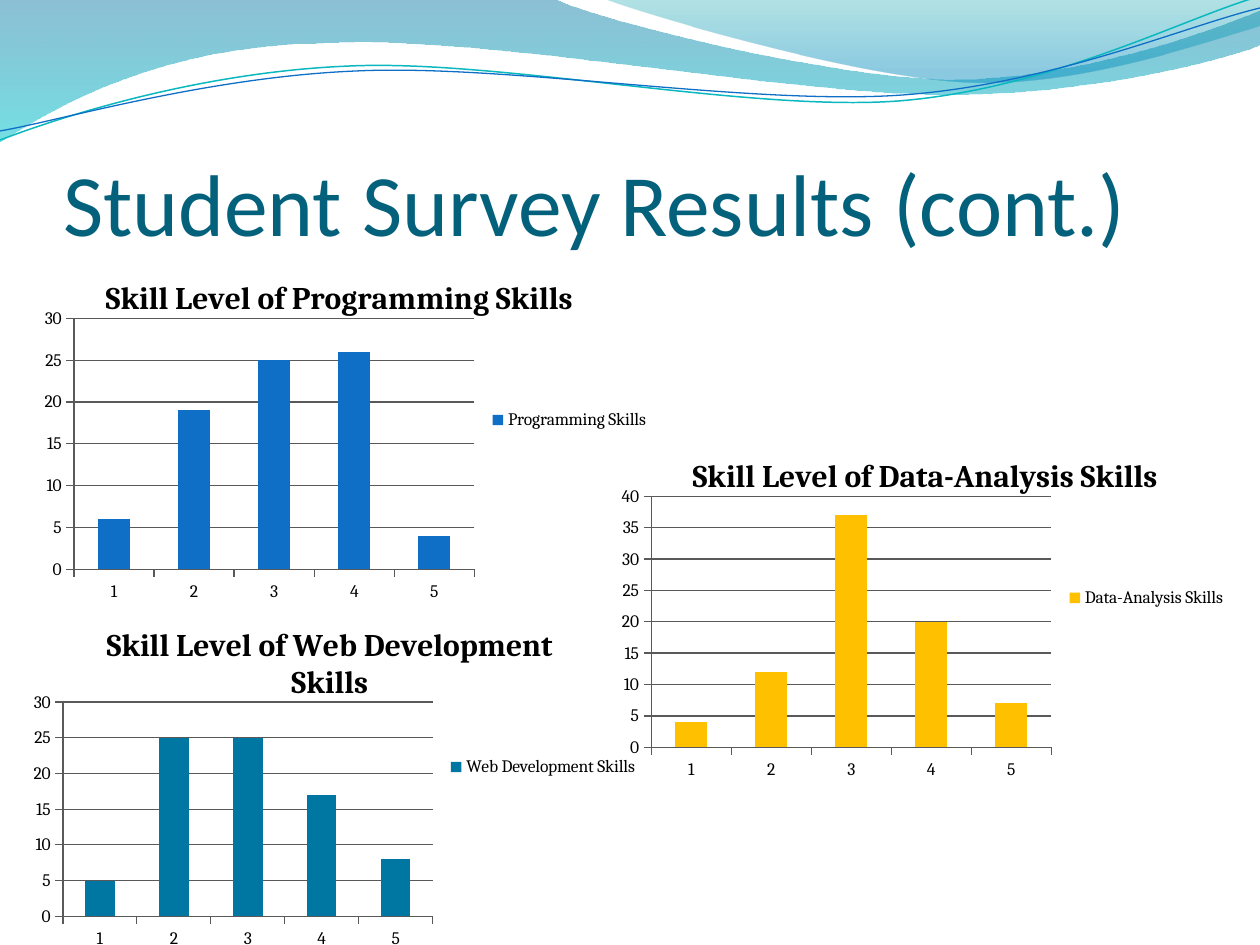
from pptx import Presentation
from pptx.chart.data import CategoryChartData as ChartData
from pptx.dml.color import RGBColor as RGB
from pptx.enum.chart import XL_CHART_TYPE as Kind, XL_LEGEND_POSITION as Legend
from pptx.enum.text import MSO_ANCHOR as Anchor
from pptx.oxml.ns import qn
from pptx.util import Pt
from lxml.etree import SubElement

PX = 914400 // 126
BLACK = RGB(0x00, 0x00, 0x00)
GRID = RGB(0x59, 0x59, 0x59)
TITLE = RGB(0x04, 0x61, 0x7B)
BLUE = RGB(0x0F, 0x6F, 0xC6)
TEAL = RGB(0x00, 0x76, 0xA3)
GOLD = RGB(0xFF, 0xC0, 0x00)
AQUA = RGB(0x0A, 0xB8, 0xBF)
DEEP = RGB(0x00, 0x74, 0xA1)
CYAN = RGB(0x00, 0xC6, 0xCF)
SEA = RGB(0x00, 0xA1, 0xA9)
SKY = RGB(0x00, 0x8B, 0xBF)


class Deck:
    head, body = "Calibri", "Cambria"

    def __init__(self, wide, high):
        self.prs = Presentation()
        self.prs.slide_width, self.prs.slide_height = wide * PX, high * PX
        self.slide = self.prs.slides.add_slide(self.prs.slide_layouts[6])
        self.shapes = self.slide.shapes

    def free(self, start, parts, close):
        """A part is one point for a line, or three for a Bezier curve."""
        pen = self.shapes.build_freeform(*start, scale=PX)
        for part in parts:
            pen.add_line_segments(part, close=False)
        if close:
            pen.add_line_segments([], close=True)
        shape = pen.convert_to_shape()
        shape.shadow.inherit = False

        # Join each three line steps of a curve into one Bezier step
        steps = iter(list(shape._element.iter(qn("a:lnTo"))))
        for part in parts:
            first, *rest = [next(steps) for _ in part]
            if rest:
                first.tag = qn("a:cubicBezTo")
            for step in rest:
                first.append(step[0])
                step.getparent().remove(step)
        return shape

    def wave(self, start, parts, stops):
        shape = self.free(start, parts, True)
        shape.line.fill.background()
        shape.fill.gradient()
        shape.fill.gradient_angle = 270
        for stop, (pos, color, _) in zip(shape.fill.gradient_stops, stops):
            stop.position = pos
            stop.color.rgb = color
        fill = shape._element.spPr.find(qn("a:gradFill"))
        for node, (_, _, alpha) in zip(fill.iter(qn("a:srgbClr")), stops):
            SubElement(node, qn("a:alpha")).set("val", str(alpha * 1000))

    def curve(self, start, parts, color, width):
        shape = self.free(start, parts, False)
        shape.fill.background()
        shape.line.color.rgb = color
        shape.line.width = Pt(width)

    def style(self, font, name, size, color, bold=False):
        font.name, font.size, font.bold = name, Pt(size), bold
        font.color.rgb = color

    def title(self, text, *box):
        frame = self.shapes.add_textbox(*(n * PX for n in box)).text_frame
        frame.word_wrap = True
        frame.vertical_anchor = Anchor.BOTTOM
        frame.margin_left = frame.margin_right = frame.margin_bottom = 0
        run = frame.paragraphs[0].add_run()
        run.text = text
        self.style(run.font, self.head, 50, TITLE)

    def place(self, title, x, y):
        """Set the title's corner as a share of the chart's size."""
        node = title._element
        layout = node.find(qn("c:layout"))
        if layout is None:
            layout = SubElement(node, qn("c:layout"))
            node.find(qn("c:tx")).addnext(layout)
        manual = SubElement(layout, qn("c:manualLayout"))
        for tag, val in (("xMode", "edge"), ("yMode", "edge"),
                         ("x", x), ("y", y)):
            SubElement(manual, qn(f"c:{tag}")).set("val", str(val))

    def chart(self, left, top, skill, vals, color, inset):
        wide, high = 630, 378
        data = ChartData()
        data.categories = ["1", "2", "3", "4", "5"]
        data.add_series(skill, vals)
        chart = self.shapes.add_chart(Kind.COLUMN_CLUSTERED, left * PX,
                                      top * PX, wide * PX, high * PX,
                                      data).chart
        self.style(chart.font, self.body, 10, BLACK)

        # Heading and legend
        run = chart.chart_title.text_frame.paragraphs[0].add_run()
        run.text = f"Skill Level of {skill}"
        self.style(run.font, self.body, 18, BLACK, True)
        self.place(chart.chart_title, inset / wide, 40 / high)
        chart.has_legend = True
        chart.legend.position = Legend.RIGHT
        chart.legend.include_in_layout = False

        # Columns and axes
        plot = chart.plots[0]
        plot.vary_by_categories = False
        plot.gap_width = 150
        fill = plot.series[0].format.fill
        fill.solid()
        fill.fore_color.rgb = color
        rows = chart.value_axis
        rows.has_major_gridlines = True
        for part in (rows, rows.major_gridlines, chart.category_axis):
            part.format.line.color.rgb = GRID
            part.format.line.width = Pt(0.75)


def main():
    deck = Deck(1260, 945)

    # Waves across the top
    deck.wave((0, 0), [[(554, -1)],
                       [(600, 21), (837, 79), (955, 79)],
                       [(1074, 79), (1207, 33), (1260, 11)],
                       [(1261, 45)],
                       [(1238, 55), (1096, 96), (940, 94)],
                       [(784, 94), (481, 35), (324, 43)],
                       [(163, 45), (58, 105), (-1, 142)]],
              [(0, DEEP, 45), (1, CYAN, 55)])
    deck.wave((604, -1), [[(641, 14), (859, 78), (969, 82)],
                          [(1079, 87), (1211, 40), (1260, 26)],
                          [(1260, 0)]],
              [(0, SEA, 30), (0.8, SKY, 45)])
    deck.curve((0, 140), [[(60, 117), (199, 72), (349, 66)],
                          [(498, 59), (747, 112), (898, 101)],
                          [(1050, 89), (1182, 19), (1257, -3)]], AQUA, 0.85)
    deck.curve((0, 131), [[(59, 121), (207, 77), (357, 71)],
                          [(508, 64), (752, 106), (903, 95)],
                          [(1053, 84), (1185, 26), (1260, 8)]], BLUE, 0.75)

    # Title and charts
    deck.title("Student Survey Results (cont.)", 63, 96, 1144, 158)
    deck.chart(32, 231, "Programming Skills", (6, 19, 25, 26, 4), BLUE, 68)
    deck.chart(21, 578, "Web Development Skills", (5, 25, 25, 17, 8), TEAL, 80)
    deck.chart(609, 409, "Data-Analysis Skills", (4, 12, 37, 20, 7), GOLD, 78)

    deck.prs.save("out.pptx")


if __name__ == "__main__":
    main()
